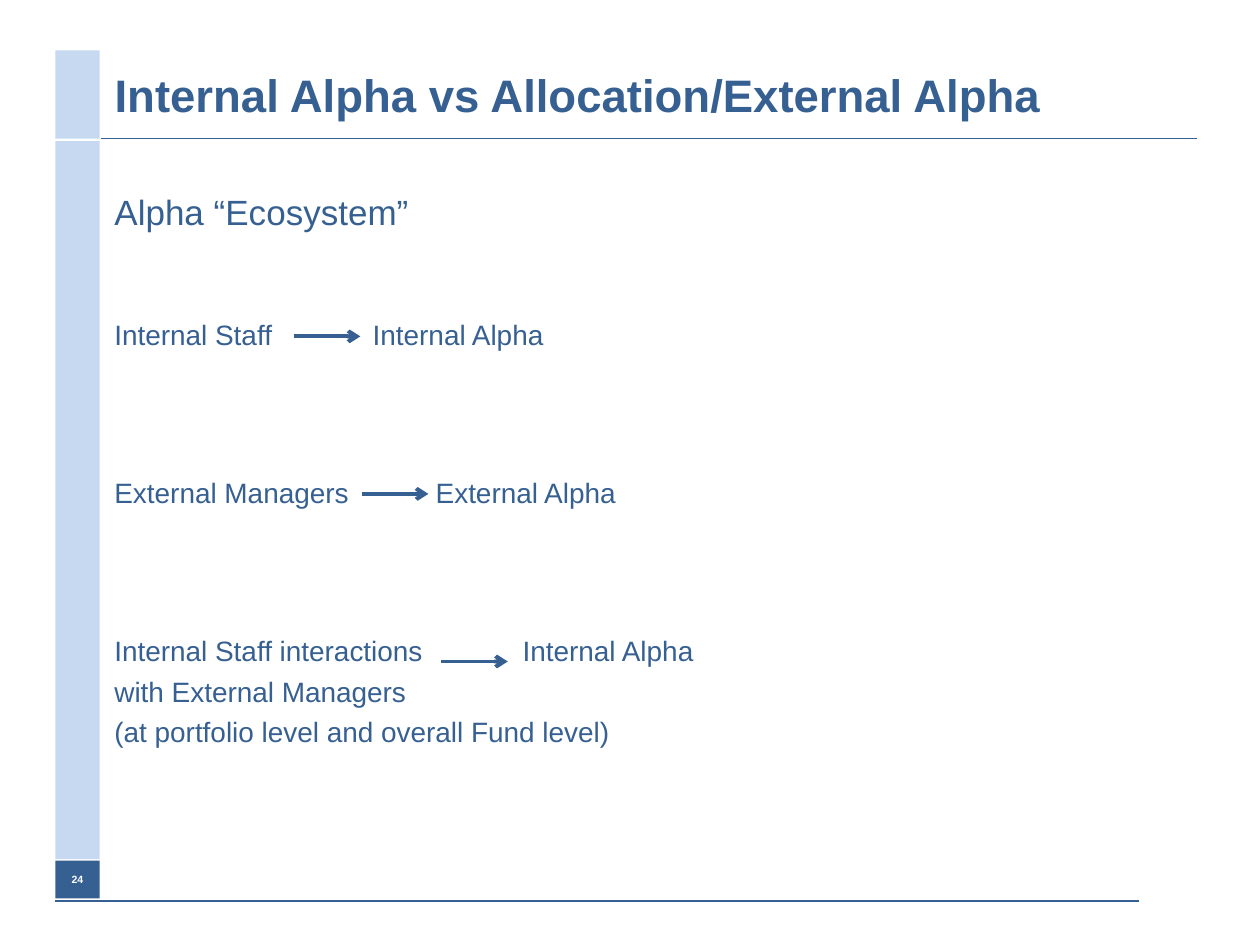
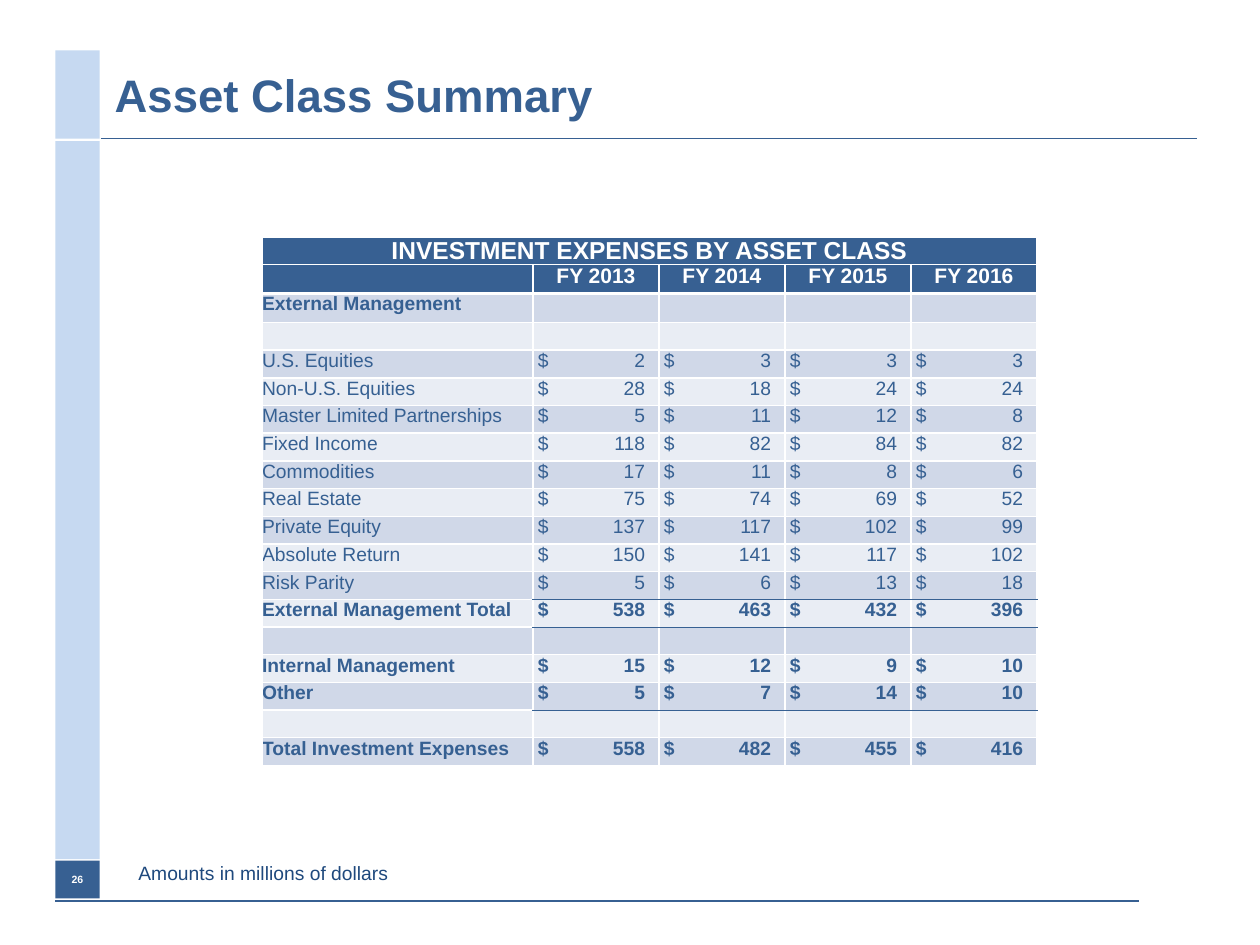
from dataclasses import dataclass

from lxml.etree import SubElement
from pptx import Presentation
from pptx.dml.color import RGBColor
from pptx.enum.shapes import MSO_CONNECTOR as CONNECTOR, MSO_SHAPE as SHAPE
from pptx.enum.text import MSO_ANCHOR as ANCHOR, MSO_AUTO_SIZE as AUTO_SIZE, PP_ALIGN as ALIGN
from pptx.oxml.ns import qn
from pptx.util import Inches, Pt


@dataclass(frozen=True)
class Theme:
    font: str = "Arial"
    blue: str = "376092"
    pale_blue: str = "C6D9F1"
    table_blue: str = "366092"
    note_blue: str = "1F497D"
    white: str = "FFFFFF"
    bands: tuple = ("D0D8E8", "E9EDF4")
    title_size: int = 26
    heading_size: int = 20
    body_size: int = 16
    table_title_size: int = 14
    table_header_size: int = 12
    table_size: int = 11
    number_size: int = 6


theme = Theme()


def style_text(paragraph, size, color, bold=False, tab=None, tab_align="l"):
    """Format the runs, or the end mark of an empty paragraph, and set one tab stop."""
    if tab is not None:
        tabs = SubElement(paragraph._p.get_or_add_pPr(), qn("a:tabLst"))
        SubElement(tabs, qn("a:tab"), pos=str(Inches(tab)), algn=tab_align)
    if not paragraph.runs:
        SubElement(paragraph._p, qn("a:endParaRPr"), sz=str(size * 100))
    for run in paragraph.runs:
        run.font.name = theme.font
        run.font.size = Pt(size)
        run.font.bold = bold
        run.font.color.rgb = RGBColor.from_string(color)


def add_line(slide, left, right, top, width, arrow=False):
    """Draw a level line, with an arrowhead at its right end if wanted."""
    line = slide.shapes.add_connector(
        CONNECTOR.STRAIGHT, Inches(left), Inches(top), Inches(right), Inches(top))
    line.line.color.rgb = RGBColor.from_string(theme.blue)
    line.line.width = Pt(width)
    if arrow:
        SubElement(line.line._get_or_add_ln(), qn("a:tailEnd"), type="arrow")
    SubElement(line._element.spPr, qn("a:effectLst"))


presentation = Presentation()
presentation.slide_width = Inches(10)
presentation.slide_height = Inches(7.5)
title_only = presentation.slide_layouts[5]

# Shared frame: side band, rules, page number and title
slides = []
for number, title_text in (
    ("24", "Internal Alpha vs Allocation/External Alpha"),
    ("26", "Asset Class Summary"),
):
    slide = presentation.slides.add_slide(title_only)
    slides.append(slide)
    add_line(slide, 0.44, 9.04, 7.15, 0.75)
    add_line(slide, 0.8, 9.5, 1.1, 1)
    for top, height, color, text in (
        (1.12, 5.7, theme.pale_blue, ""),
        (0.4, 0.7, theme.pale_blue, ""),
        (6.83, 0.3, theme.blue, number),
    ):
        band = slide.shapes.add_shape(
            SHAPE.RECTANGLE, Inches(0.44), Inches(top), Inches(0.35), Inches(height))
        band.shadow.inherit = False
        band.fill.solid()
        band.fill.fore_color.rgb = RGBColor.from_string(color)
        band.line.fill.background()
        if text:
            frame = band.text_frame
            frame.margin_left = frame.margin_right = 0
            frame.vertical_anchor = ANCHOR.MIDDLE
            frame.text = text
            frame.paragraphs[0].alignment = ALIGN.CENTER
            style_text(frame.paragraphs[0], theme.number_size, theme.white, bold=True)

    title = slide.shapes.title
    title.left, title.top = Inches(0.81), Inches(0.4)
    title.width, title.height = Inches(8.69), Inches(0.7)
    title.text_frame.text = title_text
    title.text_frame.auto_size = AUTO_SIZE.NONE
    title.text_frame.vertical_anchor = ANCHOR.MIDDLE
    title.text_frame.paragraphs[0].alignment = ALIGN.LEFT
    style_text(title.text_frame.paragraphs[0], theme.title_size, theme.blue, bold=True)

ecosystem_slide, expenses_slide = slides

# Alpha ecosystem: text, space before in points, tab stop in inches
ecosystem_lines = (
    ("Alpha “Ecosystem”", 0, None),
    ("Internal Staff\tInternal Alpha", 49, 2.05),
    ("External Managers\tExternal Alpha", 71, 2.55),
    ("Internal Staff interactions\tInternal Alpha", 71, 3.24),
    ("with External Managers", 4, None),
    ("(at portfolio level and overall Fund level)", 4, None),
)
body = ecosystem_slide.shapes.add_textbox(Inches(0.81), Inches(1.46), Inches(8.7), Inches(5.36))
body.text_frame.word_wrap = True
body.text_frame.text = "\n".join(text for text, _, _ in ecosystem_lines)
for index, (paragraph, (_, space, tab)) in enumerate(
        zip(body.text_frame.paragraphs, ecosystem_lines)):
    size = theme.body_size if index else theme.heading_size
    paragraph.space_before = Pt(space)
    style_text(paragraph, size, theme.blue, tab=tab)

for left, top in ((2.33, 2.67), (2.87, 3.92), (3.5, 5.25)):
    add_line(ecosystem_slide, left, left + 0.53, top, 2.25, arrow=True)

# Investment expenses: label, then amounts per year
expenses = (
    ("INVESTMENT EXPENSES BY ASSET CLASS",),
    ("", "FY 2013", "FY 2014", "FY 2015", "FY 2016"),
    ("External Management",),
    (),
    ("U.S. Equities", 2, 3, 3, 3),
    ("Non-U.S. Equities", 28, 18, 24, 24),
    ("Master Limited Partnerships", 5, 11, 12, 8),
    ("Fixed Income", 118, 82, 84, 82),
    ("Commodities", 17, 11, 8, 6),
    ("Real Estate", 75, 74, 69, 52),
    ("Private Equity", 137, 117, 102, 99),
    ("Absolute Return", 150, 141, 117, 102),
    ("Risk Parity", 5, 6, 13, 18),
    ("External Management Total", 538, 463, 432, 396),
    (),
    ("Internal Management", 15, 12, 9, 10),
    ("Other", 5, 7, 14, 10),
    (),
    ("Total Investment Expenses", 558, 482, 455, 416),
)
bold_labels = {"External Management", "External Management Total", "Internal Management",
               "Other", "Total Investment Expenses"}
ruled_rows = {index for index, row in enumerate(expenses)
              if row and row[0] in ("Risk Parity", "External Management Total", "Other")}
header_rows = 2

table = expenses_slide.shapes.add_table(
    len(expenses), 5, Inches(2.08), Inches(1.88), Inches(6.15), Inches(4.19)).table
table.first_row = table.horz_banding = False
for index, column in enumerate(table.columns):
    column.width = Inches(1 if index else 2.15)
for index, row in enumerate(table.rows):
    row.height = Inches(0.23 if index in (1, 2) else 0.22)
table.cell(0, 0).merge(table.cell(0, 4))

for row_index, values in enumerate(expenses):
    is_header = row_index < header_rows
    for column_index in range(5):
        cell = table.cell(row_index, column_index)
        cell.margin_left = cell.margin_right = cell.margin_top = cell.margin_bottom = 0
        cell.vertical_anchor = ANCHOR.TOP if row_index else ANCHOR.BOTTOM

        edges = {"a:lnL": (theme.white, 1), "a:lnR": (theme.white, 1)}
        for side, row_above in (("a:lnT", row_index - 1), ("a:lnB", row_index)):
            if row_above in ruled_rows and column_index:
                edges[side] = (theme.table_blue, 0.5)
            else:
                edges[side] = (theme.white, 1.5 if row_above == header_rows - 1 else 1)
        for side, (color, width) in edges.items():
            edge = SubElement(cell._tc.get_or_add_tcPr(), qn(side), w=str(Pt(width)))
            SubElement(SubElement(edge, qn("a:solidFill")), qn("a:srgbClr"), val=color)

        cell.fill.solid()
        cell.fill.fore_color.rgb = RGBColor.from_string(
            theme.blue if is_header else theme.bands[row_index % 2])

        value = values[column_index] if column_index < len(values) else ""
        is_amount = isinstance(value, int)
        paragraph = cell.text_frame.paragraphs[0]
        paragraph.text = f"$\t{value}" if is_amount else value
        if is_header:
            paragraph.alignment = ALIGN.CENTER
            size = theme.table_header_size if row_index else theme.table_title_size
            style_text(paragraph, size, theme.white, bold=True)
        else:
            if is_amount:
                cell.margin_left = Inches(0.04)
            style_text(paragraph, theme.table_size, theme.table_blue,
                       bold=bool(values) and values[0] in bold_labels,
                       tab=0.85 if is_amount else None, tab_align="r")

note = expenses_slide.shapes.add_textbox(Inches(1), Inches(6.73), Inches(5.67), Inches(0.4))
note.text_frame.word_wrap = True
note.text_frame.vertical_anchor = ANCHOR.MIDDLE
note.text_frame.text = "Amounts in millions of dollars"
style_text(note.text_frame.paragraphs[0], theme.table_size, theme.note_blue)

presentation.save("out.pptx")
